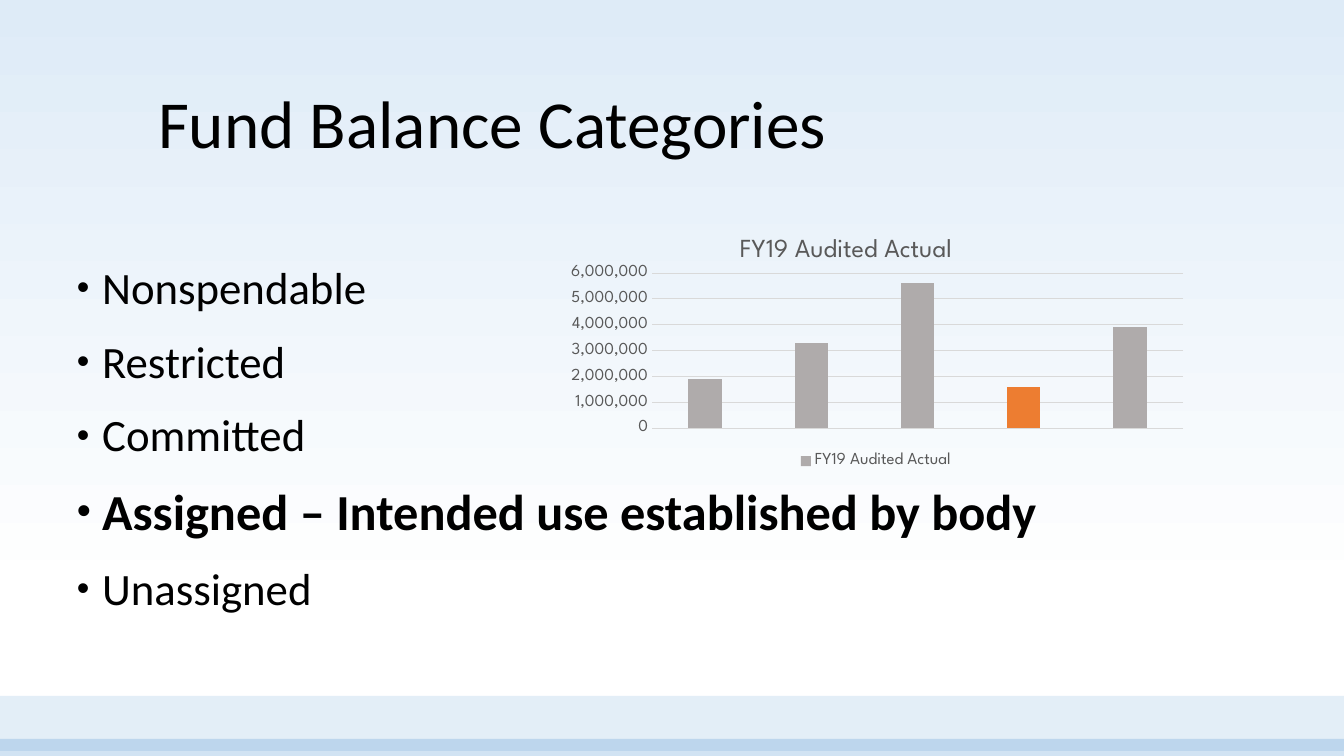
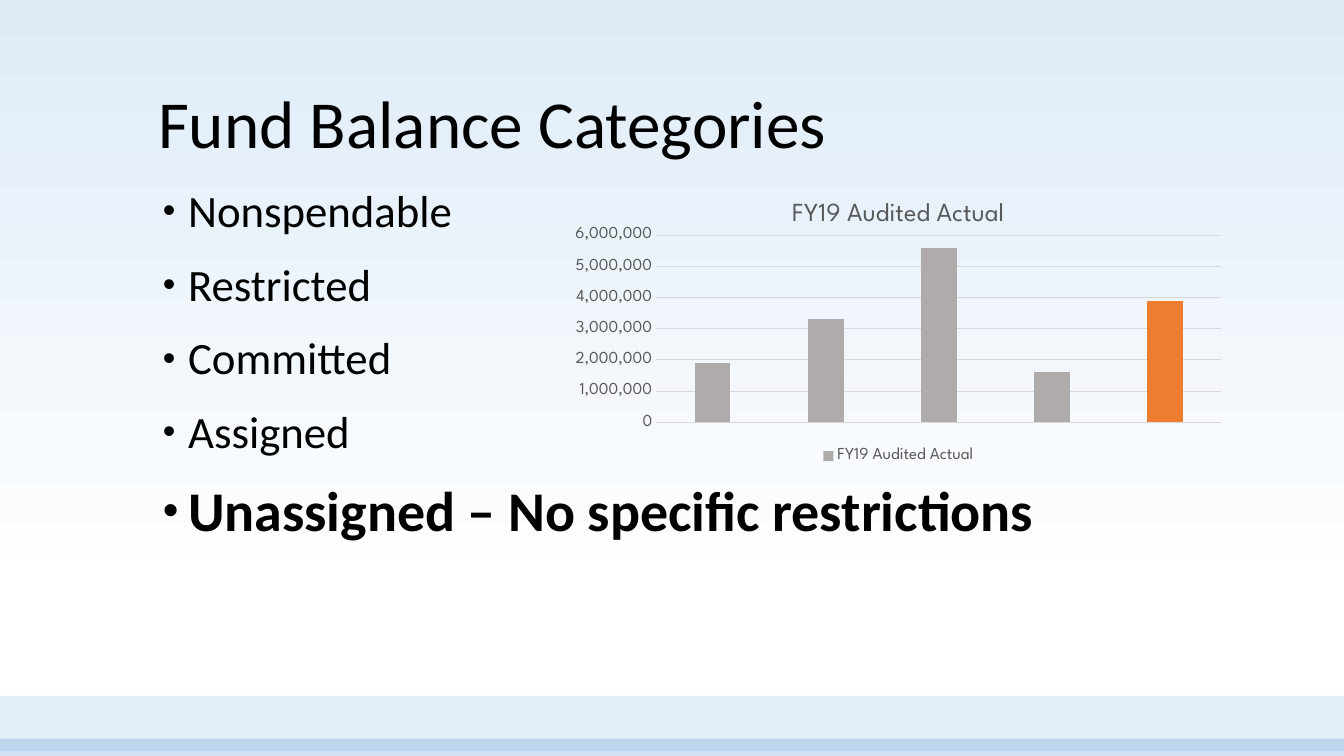
from pptx import Presentation
from pptx.chart.data import CategoryChartData
from pptx.dml.color import RGBColor
from pptx.enum.chart import XL_CHART_TYPE as ChartType
from pptx.enum.chart import XL_LEGEND_POSITION as LegendPosition
from pptx.enum.chart import XL_TICK_MARK as TickMark
from pptx.enum.shapes import MSO_SHAPE as Shape
from pptx.enum.text import MSO_ANCHOR as Anchor
from pptx.oxml import parse_xml
from pptx.oxml.ns import nsdecls, qn
from pptx.util import Emu, Pt

EMU_PER_PX = 914400 / 100.8
TEXT_FONT, CHART_FONT = "Calibri", "League Spartan"
BLACK, DARK_GREY, GRID_GREY = "000000", "595959", "D9D9D9"
BAR_GREY, HIGHLIGHT, BAND_BLUE = "AFABAB", "ED7D31", "5B9BD5"
SKY, WHITE = "DEEBF7", "FFFFFF"
rgb = RGBColor.from_string


def px(*lengths):
    return [Emu(round(length * EMU_PER_PX)) for length in lengths]


def write(paragraph, text, size, font=TEXT_FONT, color=BLACK, bold=False):
    run = paragraph.add_run()
    run.text = text
    run.font.size, run.font.name, run.font.bold = Pt(size), font, bold
    run.font.color.rgb = rgb(color)


FUND_BALANCES = {
    "Nonspendable": 1900000,
    "Restricted": 3300000,
    "Committed": 5600000,
    "Assigned": 1600000,
    "Unassigned": 3900000,
}
SERIES = "FY19 Audited Actual"
SLIDES = [
    {
        "focus": "Assigned", "meaning": "Intended use established by body", "focus_size": 36,
        "list_box": (62, 261, 1186, 479), "chart_box": (556, 210, 640, 263),
        "plot": (0.15, 0.24, 0.83, 0.59), "heading": (0.28, 0.08),
    },
    {
        "focus": "Unassigned", "meaning": "No specific restrictions", "focus_size": 40,
        "list_box": (148, 184, 1048, 479), "chart_box": (562, 184, 673, 284),
        "plot": (0.14, 0.18, 0.84, 0.66), "heading": None,
    },
]

deck = Presentation()
deck.slide_width, deck.slide_height = px(1344, 756)
layout = deck.slide_layouts[5]
slides = [deck.slides.add_slide(layout) for _ in SLIDES]

# Shared background and footer bands live on the layout
sky = layout.background.fill
sky.gradient()
sky.gradient_angle = 270
for stop, position, color in zip(sky.gradient_stops, (0, 0.79), (SKY, WHITE)):
    stop.position = position
    stop.color.rgb = rgb(color)
sky_color = next(layout.element.iter(qn("a:srgbClr")))
sky_color.append(parse_xml(f'<a:alpha {nsdecls("a")} val="56000"/>'))

for index, (top, height, opacity) in enumerate([(696, 55, 17), (739, 17, 28)]):
    band = slides[0].shapes.add_shape(Shape.RECTANGLE, *px(0, top, 1344, height))
    band.shadow.inherit = False
    band.line.fill.background()
    band.fill.solid()
    band.fill.fore_color.rgb = rgb(BAND_BLUE)
    band_color = next(band.element.iter(qn("a:srgbClr")))
    band_color.append(parse_xml(f'<a:alpha {nsdecls("a")} val="{opacity * 1000}"/>'))
    layout.shapes.element.insert(2 + index, band.element)

for slide, content in zip(slides, SLIDES):
    title = slide.shapes.title
    title.left, title.top, title.width, title.height = px(148, 48, 1048, 120)
    title.text_frame.vertical_anchor = Anchor.BOTTOM
    title_line = title.text_frame.paragraphs[0]
    title_line.line_spacing = 0.9
    title_line.alignment = 1
    write(title_line, "Fund Balance Categories", 48)

    categories = slide.shapes.add_textbox(*px(*content["list_box"])).text_frame
    categories.word_wrap = True
    for index, name in enumerate(FUND_BALANCES):
        item = categories.add_paragraph() if index else categories.paragraphs[0]
        item.line_spacing, item.space_before = 0.9, Pt(18)
        bullet = item._p.get_or_add_pPr()
        bullet.set("marL", "274320")
        bullet.set("indent", "-228600")
        for tag in ('buSzPct val="80000"', 'buFont typeface="Arial"', 'buChar char="•"'):
            bullet.append(parse_xml(f'<a:{tag} {nsdecls("a")}/>'))
        if name == content["focus"]:
            write(item, f"{name} – {content['meaning']}", content["focus_size"], bold=True)
        else:
            write(item, name, 32)

    data = CategoryChartData(number_format="#,##0")
    data.categories = [str(number + 1) for number in range(len(FUND_BALANCES))]
    data.add_series(SERIES, FUND_BALANCES.values())
    chart = slide.shapes.add_chart(
        ChartType.COLUMN_CLUSTERED, *px(*content["chart_box"]), data).chart
    chart.font.size, chart.font.name = Pt(10), CHART_FONT
    chart.has_title = chart.has_legend = True
    heading = chart.chart_title
    write(heading.text_frame.paragraphs[0], SERIES, 18.6, CHART_FONT, DARK_GREY)
    chart.legend.position = LegendPosition.BOTTOM
    chart.legend.include_in_layout = False

    chart.category_axis.visible = False
    amounts = chart.value_axis
    amounts.minimum_scale, amounts.maximum_scale, amounts.major_unit = 0, 6000000, 1000000
    amounts.major_tick_mark = amounts.minor_tick_mark = TickMark.NONE
    amounts.format.line.fill.background()
    amounts.major_gridlines.format.line.color.rgb = rgb(GRID_GREY)
    amounts.major_gridlines.format.line.width = Pt(0.75)
    amounts.tick_labels.number_format = "#,##0"
    amounts.tick_labels.number_format_is_linked = False
    for font in (amounts.tick_labels.font, chart.legend.font):
        font.size, font.name = Pt(12), CHART_FONT
        font.color.rgb = rgb(DARK_GREY)

    columns = chart.plots[0]
    columns.gap_width, columns.overlap, columns.vary_by_categories = 219, -27, False
    balances = columns.series[0]
    focus_column = balances.points[list(FUND_BALANCES).index(content["focus"])]
    for part, color in ((balances, BAR_GREY), (focus_column, HIGHLIGHT)):
        part.format.fill.solid()
        part.format.fill.fore_color.rgb = rgb(color)

    plot_area = chart.element.find(qn("c:chart")).find(qn("c:plotArea"))
    for parent, index, target, fractions in (
        (plot_area, 0, '<c:layoutTarget val="inner"/>', content["plot"]),
        (heading.element, 1, "", content["heading"]),
    ):
        if fractions is None:
            continue
        for automatic in parent.findall(qn("c:layout")):
            parent.remove(automatic)
        modes = "".join(f'<c:{axis}Mode val="edge"/>' for axis in "xy")
        places = "".join(f'<c:{key} val="{value}"/>' for key, value in zip("xywh", fractions))
        parent.insert(index, parse_xml(
            f'<c:layout {nsdecls("c")}><c:manualLayout>{target}{modes}{places}'
            "</c:manualLayout></c:layout>"))

deck.save("out.pptx")
